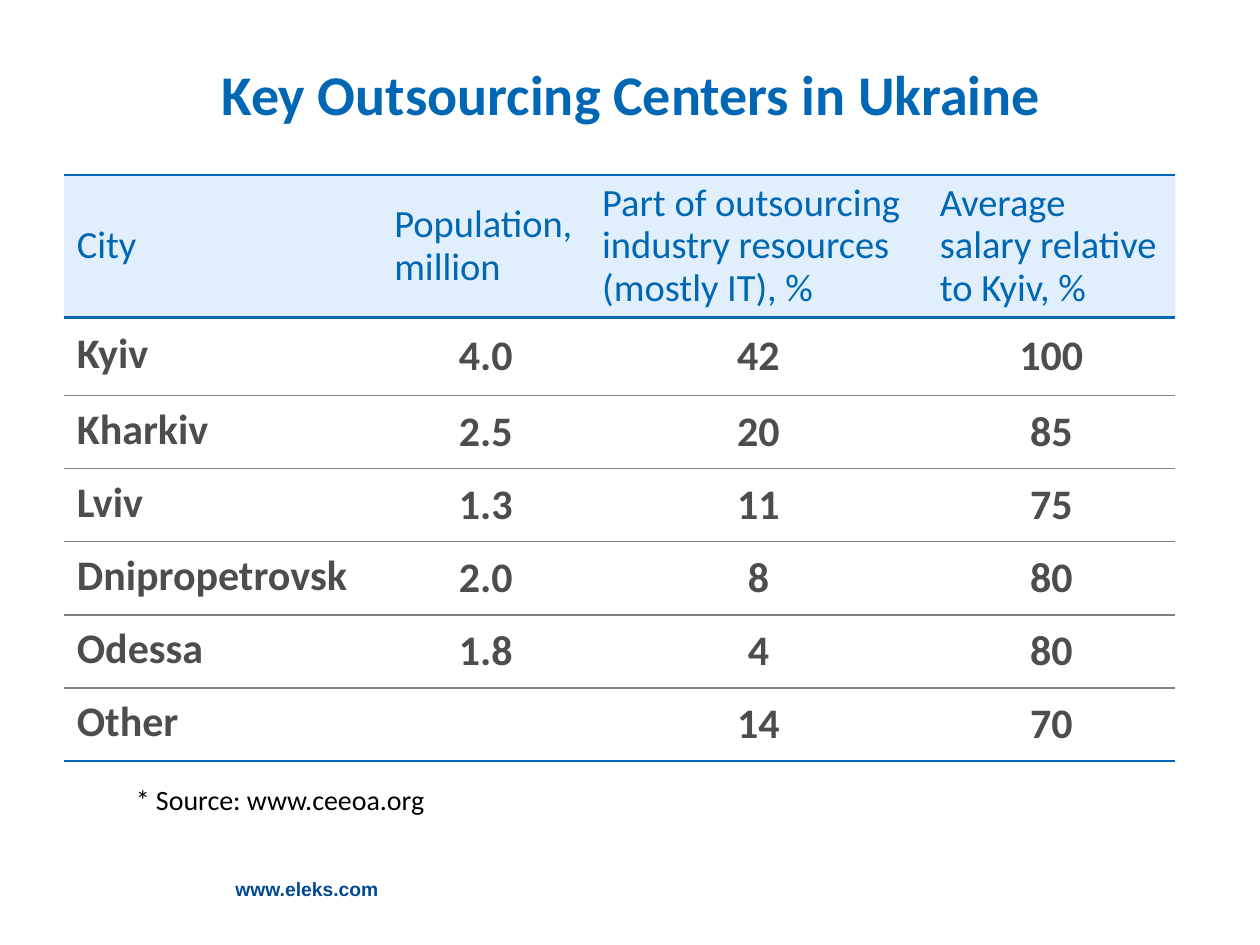
"""Build a slide with a table of the key outsourcing centers in Ukraine."""
from dataclasses import dataclass

from lxml import etree
from pptx import Presentation
from pptx.dml.color import RGBColor
from pptx.enum.text import MSO_ANCHOR, MSO_AUTO_SIZE, PP_ALIGN
from pptx.oxml.ns import qn
from pptx.util import Inches, Pt

LEFT, CENTER = PP_ALIGN.LEFT, PP_ALIGN.CENTER
TOP, MIDDLE = MSO_ANCHOR.TOP, MSO_ANCHOR.MIDDLE
FIT_SHAPE = MSO_AUTO_SIZE.SHAPE_TO_FIT_TEXT
COLORS = {
    "blue": "0067B4",
    "header": "C3E1F9",
    "body": "4D4D4D",
    "rule": "808080",
    "black": "000000",
    "footer": "004992",
}
HEADERS = (
    "City",
    "Population,\nmillion",
    "Part of outsourcing\nindustry resources\n(mostly IT), %",
    "Average salary relative to Kyiv, %",
)
COLUMN_WIDTHS = (2.52, 1.65, 2.68, 1.97)
ROW_HEIGHTS = (1.13, 0.62) + (0.58,) * 5


@dataclass(frozen=True)
class Center:
    city: str
    population: str
    share: str
    salary: str


@dataclass(frozen=True)
class Rule:
    color: str
    width: float


CENTERS = (
    Center("Kyiv", "4.0", "42", "100"),
    Center("Kharkiv", "2.5", "20", "85"),
    Center("Lviv", "1.3", "11", "75"),
    Center("Dnipropetrovsk", "2.0", "8", "80"),
    Center("Odessa", "1.8", "4", "80"),
    Center("Other", "", "14", "70"),
)
STRONG = Rule("blue", 1.5)
THIN = Rule("rule", 1)


def write_text(frame, text: str, *, size: float, color: str, font: str = "Calibri",
               bold: bool = False, align=LEFT, spacing: float = 0.9) -> None:
    """Fill a text frame with one paragraph for each line of text."""
    for index, line in enumerate(text.split("\n")):
        para = frame.add_paragraph() if index else frame.paragraphs[0]
        para.alignment = align
        para.line_spacing = spacing
        para.font.size = Pt(size)
        if line:
            span = para.add_run()
            span.text = line
            span.font.name = font
            span.font.size = Pt(size)
            span.font.bold = bold
            span.font.color.rgb = RGBColor.from_string(COLORS[color])


def add_text(page, place: tuple, text: str, *, anchor=TOP, **text_format):
    """Add a wrapped text box and return its frame."""
    box = page.shapes.add_textbox(*map(Inches, place))
    frame = box.text_frame
    frame.word_wrap = True
    frame.vertical_anchor = anchor
    write_text(frame, text, **text_format)
    return frame


def set_borders(cell, top: Rule, bottom: Rule) -> None:
    """Rule a cell above and below and leave its sides open."""
    properties = cell._tc.get_or_add_tcPr()
    sides = {"a:lnL": None, "a:lnR": None, "a:lnT": top, "a:lnB": bottom}
    for position, (tag, rule) in enumerate(sides.items()):
        line = etree.Element(qn(tag))
        properties.insert(position, line)
        if rule is None:
            etree.SubElement(line, qn("a:noFill"))
        else:
            line.set("w", str(Pt(rule.width)))
            fill = etree.SubElement(line, qn("a:solidFill"))
            etree.SubElement(fill, qn("a:srgbClr"), val=COLORS[rule.color])


def fill_header(cell) -> None:
    """Give a header cell its half-transparent fill."""
    cell.fill.solid()
    cell.fill.fore_color.rgb = RGBColor.from_string(COLORS["header"])
    color = cell._tc.tcPr.find(qn("a:solidFill")).find(qn("a:srgbClr"))
    etree.SubElement(color, qn("a:alpha"), val="50000")


def add_centers_table(page) -> None:
    """Add the table of cities."""
    rows = [HEADERS] + [(c.city, c.population, c.share, c.salary) for c in CENTERS]
    place = map(Inches, (0.51, 1.39, sum(COLUMN_WIDTHS), sum(ROW_HEIGHTS)))
    table = page.shapes.add_table(len(rows), len(HEADERS), *place).table
    table.first_row = table.horz_banding = False
    for column, width in zip(table.columns, COLUMN_WIDTHS):
        column.width = Inches(width)
    rules = [STRONG, STRONG] + [THIN] * (len(CENTERS) - 1) + [STRONG]
    for row_index, texts in enumerate(rows):
        table.rows[row_index].height = Inches(ROW_HEIGHTS[row_index])
        for column_index, text in enumerate(texts):
            cell = table.cell(row_index, column_index)
            cell.vertical_anchor = MIDDLE
            if row_index == 0:
                fill_header(cell)
                write_text(cell.text_frame, text, size=22, color="blue")
            else:
                cell.fill.background()
                write_text(cell.text_frame, text, size=24, color="body", bold=True,
                           align=CENTER if column_index else LEFT,
                           spacing=0.9 if column_index else 0.8)
            set_borders(cell, rules[row_index], rules[row_index + 1])


def main() -> None:
    """Build and save the deck."""
    deck = Presentation()
    deck.slide_width, deck.slide_height = Inches(10), Inches(7.5)
    page = deck.slides.add_slide(deck.slide_layouts[6])
    footer = add_text(page, (1.77, 6.91, 1.73, 0.28), "www.eleks.com", size=11,
                      color="footer", font="Arial", bold=True, spacing=1.0)
    footer.auto_size = FIT_SHAPE
    add_centers_table(page)
    add_text(page, (0.51, 0.28, 9, 1.02), "Key Outsourcing Centers in Ukraine", size=32,
             color="blue", bold=True, align=CENTER, anchor=MIDDLE, spacing=0.8)
    source = add_text(page, (0.98, 6.19, 3.94, 0.55), "* Source: www.ceeoa.org",
                      size=16, color="black")
    properties = source.paragraphs[0]._p.get_or_add_pPr()
    properties.set("marL", str(Inches(0.38)))
    properties.set("indent", str(Inches(-0.38)))
    deck.save("out.pptx")


if __name__ == "__main__":
    main()
